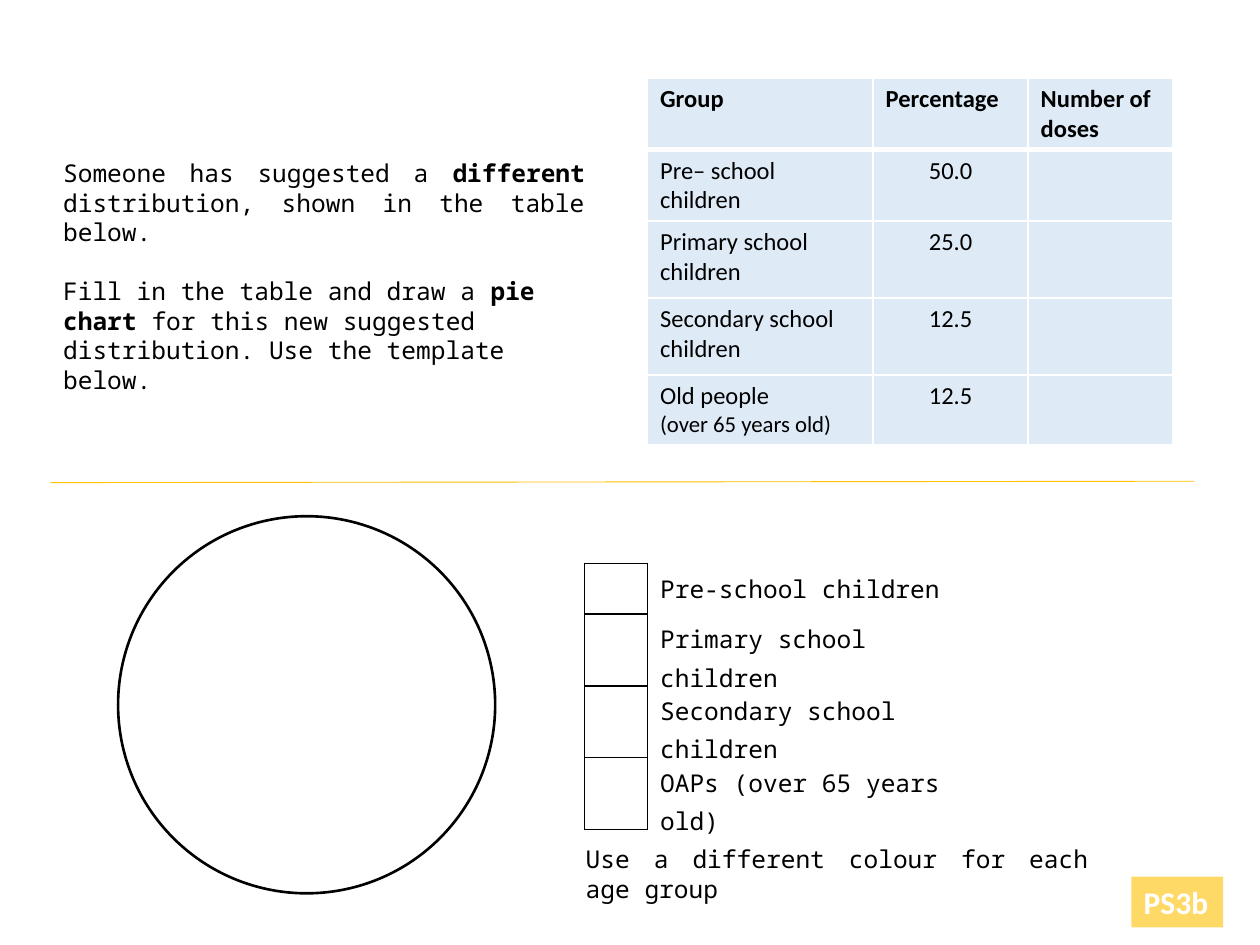
from lxml import etree
from pptx import Presentation
from pptx import util as u
from pptx.dml.color import RGBColor
from pptx.enum import shapes, text
from pptx.oxml.ns import qn

Pt = u.Pt
MONO, SANS = "Noto Sans Mono", "Calibri"
BLACK, WHITE = "000000", "FFFFFF"
PALE_BLUE, GOLD, PALE_GOLD = "DEEBF7", "FFC000", "FFD966"
PLAIN_TABLE = "{2D5ABB26-0587-4C30-8999-92F81FD0307C}"
LEFT, CENTER, JUSTIFY = (text.PP_ALIGN.LEFT, text.PP_ALIGN.CENTER,
                         text.PP_ALIGN.JUSTIFY)


def rgb(color):
    return RGBColor.from_string(color)


class Sheet:
    def __init__(self, slide, size=14):
        self.s, self.size = slide, size

    def add_runs(self, p, runs, font, align=LEFT, color=BLACK, size=None):
        """Fill a paragraph with (text, bold) runs."""
        p.alignment = align
        for words, bold in runs:
            r = p.add_run()
            r.text = words
            r.font.name, r.font.size = font, Pt(size or self.size)
            r.font.bold, r.font.color.rgb = bold, rgb(color)

    def text_box(self, x, y, w, h, paragraphs):
        """Stack (runs, alignment) paragraphs one blank line's height apart."""
        tf = self.s.shapes.add_textbox(Pt(x), Pt(y), Pt(w), Pt(h)).text_frame
        tf.word_wrap = True
        for i, (runs, align) in enumerate(paragraphs):
            p = tf.add_paragraph() if i else tf.paragraphs[0]
            if i:
                p.space_before = Pt(17)
            self.add_runs(p, runs, MONO, align)

    def shape(self, kind, x, y, w, h, fill, line=None):
        sp = self.s.shapes.add_shape(kind, Pt(x), Pt(y), Pt(w), Pt(h))
        sp.shadow.inherit = False
        sp.fill.solid()
        sp.fill.fore_color.rgb = rgb(fill)
        if line:
            sp.line.color.rgb = rgb(line)
            sp.line.width = Pt(1.5)
        else:
            sp.line.fill.background()
        return sp

    def rule(self, x1, y1, x2, y2, color):
        c = self.s.shapes.add_connector(shapes.MSO_CONNECTOR.STRAIGHT,
                                        Pt(x1), Pt(y1), Pt(x2), Pt(y2))
        c.line.color.rgb = rgb(color)
        c.line.width = Pt(0.5)
        etree.SubElement(c._element.spPr, qn("a:effectLst"))

    def table(self, x, y, widths, heights):
        frame = self.s.shapes.add_table(len(heights), len(widths), Pt(x), Pt(y),
                                        Pt(sum(widths)), Pt(sum(heights)))
        t = frame.table
        t._tbl.tblPr.find(qn("a:tableStyleId")).text = PLAIN_TABLE
        t.first_row = t.horz_banding = False
        for col, w in zip(t.columns, widths):
            col.width = Pt(w)
        for row, h in zip(t.rows, heights):
            row.height = Pt(h)
        return t

    def borders(self, cell, color, **widths):
        """Draw sides L, R, T, B at the given widths, ahead of any fill."""
        tcPr = cell._tc.get_or_add_tcPr()
        sides = [side for side in "LRTB" if side in widths]
        for i, side in enumerate(sides):
            ln = etree.Element(qn("a:ln" + side), w=str(Pt(widths[side])))
            fill = etree.SubElement(ln, qn("a:solidFill"))
            etree.SubElement(fill, qn("a:srgbClr"), val=color)
            tcPr.insert(i, ln)


def add_dose_table(sheet):
    rows = [("Group", "Percentage", "Number of doses"),
            ("Pre– school children", "50.0", ""),
            ("Primary school children", "25.0", ""),
            ("Secondary school children", "12.5", ""),
            ("Old people\v(over 65 years old)", "12.5", "")]
    t = sheet.table(370, 44.6, [128.9, 88.6, 82.8], [40.6, 41, 44, 44, 39])
    for i, row in enumerate(rows):
        for j, words in enumerate(row):
            cell = t.cell(i, j)
            cell.fill.solid()
            cell.fill.fore_color.rgb = rgb(PALE_BLUE)
            sheet.borders(cell, WHITE, L=1, R=1, T=3 if i == 1 else 1,
                          B=1 if i else 3)
            p = cell.text_frame.paragraphs[0]
            align = CENTER if i and j == 1 else LEFT
            first, _, note = words.partition("\v")
            if first:
                sheet.add_runs(p, [(first, i == 0)], SANS, align)
            if note:
                p.add_line_break()
                sheet.add_runs(p, [(note, False)], SANS, align, size=13)


def add_colour_key(sheet):
    groups = ["Pre-school children", "Primary school children",
              "Secondary school children", "OAPs (over 65 years old)"]
    t = sheet.table(334, 322, [36, 179], [29, 41, 41, 41])
    for i, group in enumerate(groups):
        swatch, label = t.cell(i, 0), t.cell(i, 1)
        for cell in (swatch, label):
            cell.margin_top, cell.margin_bottom = Pt(2), 0
        sheet.borders(swatch, BLACK, L=1, R=1, T=1, B=1)
        sheet.borders(label, BLACK, L=1)
        p = label.text_frame.paragraphs[0]
        p.line_spacing = 1.15
        sheet.add_runs(p, [(group, False)], MONO)


def main():
    prs = Presentation()
    prs.slide_width, prs.slide_height = Pt(720), Pt(540)
    sheet = Sheet(prs.slides.add_slide(prs.slide_layouts[6]))

    sheet.text_box(29, 87, 312.5, 143, [
        ([("Someone has suggested a ", False), ("different", True),
          (" distribution, shown in the table below.", False)], JUSTIFY),
        ([("Fill in the table and draw a", False), (" pie chart ", True),
          ("for this new suggested distribution. Use the template below.",
           False)], LEFT)])
    add_dose_table(sheet)
    add_colour_key(sheet)
    sheet.shape(shapes.MSO_SHAPE.OVAL, 67.5, 295, 215.5, 215.5, WHITE, BLACK)
    sheet.text_box(327.6, 479, 301.7, 41, [
        ([("Use a different colour for each age group", False)], JUSTIFY)])
    sheet.rule(29, 275.8, 682.6, 275, GOLD)

    tag = sheet.shape(shapes.MSO_SHAPE.RECTANGLE, 646.5, 501, 52.5, 29, PALE_GOLD)
    tf = tag.text_frame
    tf.word_wrap = False
    sheet.add_runs(tf.paragraphs[0], [("PS3b", True)], SANS, color=WHITE, size=18)
    prs.save("out.pptx")


if __name__ == "__main__":
    main()
